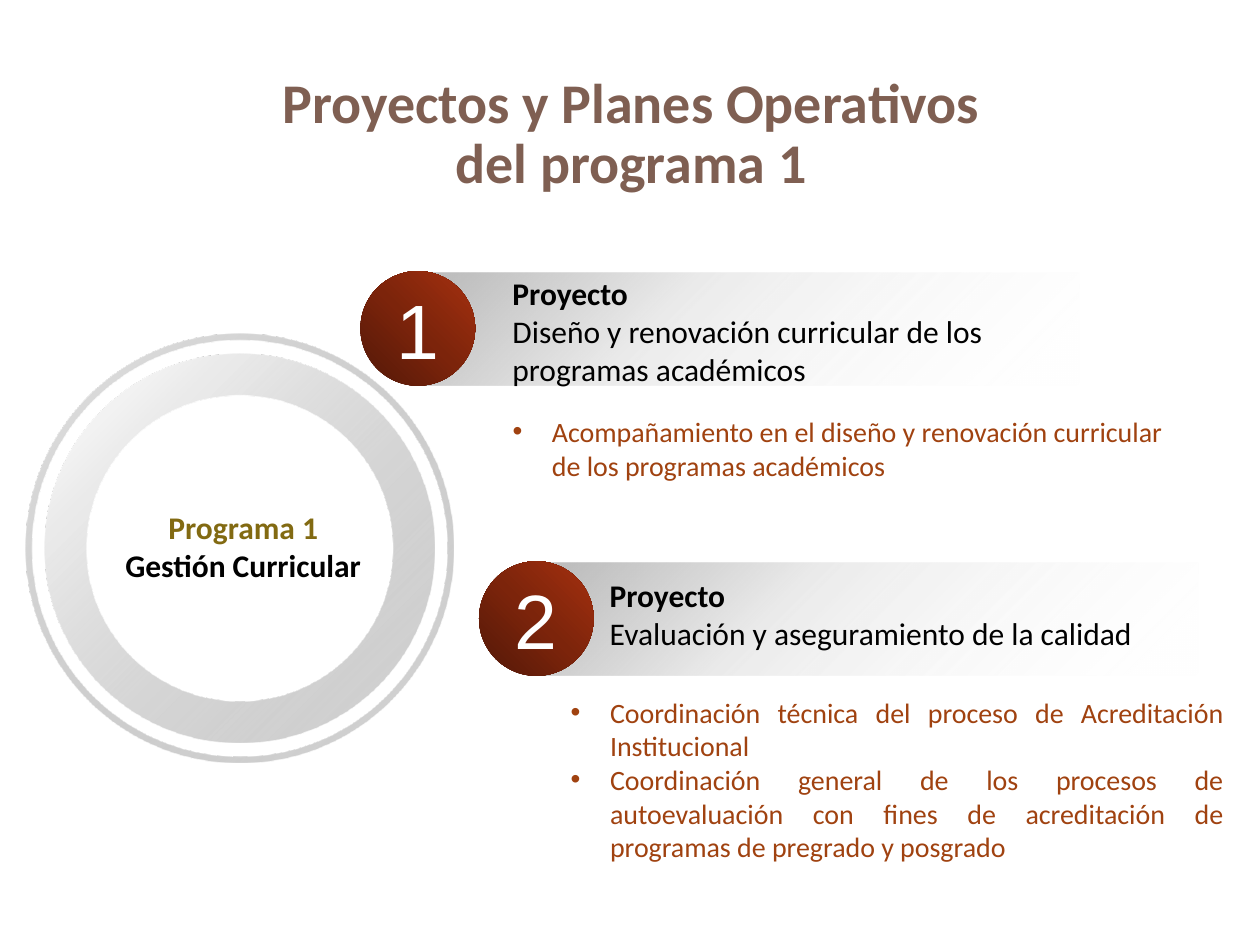
from lxml import etree
from pptx import Presentation
from pptx.dml.color import RGBColor
from pptx.enum.shapes import MSO_SHAPE
from pptx.enum.text import MSO_ANCHOR, MSO_AUTO_SIZE, PP_ALIGN
from pptx.oxml.ns import qn
from pptx.util import Pt

RECTANGLE, OVAL, DONUT = MSO_SHAPE.RECTANGLE, MSO_SHAPE.OVAL, MSO_SHAPE.DONUT
TOP, MIDDLE = MSO_ANCHOR.TOP, MSO_ANCHOR.MIDDLE
NO_FIT, GROW = MSO_AUTO_SIZE.NONE, MSO_AUTO_SIZE.SHAPE_TO_FIT_TEXT
LEFT, CENTER, JUSTIFY = PP_ALIGN.LEFT, PP_ALIGN.CENTER, PP_ALIGN.JUSTIFY

BLACK = RGBColor(0x00, 0x00, 0x00)
WHITE = RGBColor(0xFF, 0xFF, 0xFF)
TITLE_BROWN = RGBColor(0x7F, 0x5F, 0x52)
OLIVE = RGBColor(0x82, 0x6A, 0x12)
RUST = RGBColor(0xA0, 0x42, 0x10)
DARK_RED = RGBColor(0x52, 0x18, 0x08)
MID_RED = RGBColor(0x7C, 0x24, 0x0B)
BRIGHT_RED = RGBColor(0xA5, 0x30, 0x0F)
SILVER = RGBColor(0xBF, 0xBF, 0xBF)
PALE_GRAY = RGBColor(0xF2, 0xF2, 0xF2)
LIGHT_GRAY = RGBColor(0xD9, 0xD9, 0xD9)
GRAY = RGBColor(0xA6, 0xA6, 0xA6)

BANNER_STOPS = [(5, SILVER, 100), (37, SILVER, 31), (100, WHITE, 0)]
BADGE_STOPS = [(0, DARK_RED, 100), (50, MID_RED, 100), (100, BRIGHT_RED, 100)]
BAND_STOPS = [(16, PALE_GRAY, 100), (87, GRAY, 52)]
RIM_STOPS = [(16, LIGHT_GRAY, 100), (87, GRAY, 52)]


def add_gradient_shape(shapes, kind, box, stops, angle):
    """Add an unlined shape whose stops are (position %, colour, opacity %)."""
    shape = shapes.add_shape(kind, *(Pt(length) for length in box))
    shape.shadow.inherit = False
    shape.line.fill.background()
    shape.fill.gradient()
    gradient = shape.element.spPr.find(qn("a:gradFill"))
    for child in list(gradient):
        gradient.remove(child)
    stop_list = etree.SubElement(gradient, qn("a:gsLst"))
    for position, color, opacity in stops:
        stop = etree.SubElement(stop_list, qn("a:gs"), pos=str(position * 1000))
        tint = etree.SubElement(stop, qn("a:srgbClr"), val=str(color))
        if opacity < 100:
            etree.SubElement(tint, qn("a:alpha"), val=str(opacity * 1000))
    etree.SubElement(gradient, qn("a:lin"), ang=str(angle * 60000), scaled="0")
    return shape


def add_run(paragraph, text, size, color, bold=False, font="Calibri"):
    """Append one formatted run to a paragraph."""
    run = paragraph.add_run()
    run.text = text
    run.font.name = font
    run.font.size = Pt(size)
    run.font.bold = bold
    run.font.color.rgb = color


def add_text(shapes, box, lines, size, align, anchor=MIDDLE, bulleted=False):
    """Add a text box with one paragraph per (text, colour, bold) line."""
    textbox = shapes.add_textbox(*(Pt(length) for length in box))
    frame = textbox.text_frame
    frame.word_wrap = True
    frame.auto_size = GROW
    frame.vertical_anchor = anchor
    for index, (text, color, bold) in enumerate(lines):
        paragraph = frame.add_paragraph() if index else frame.paragraphs[0]
        paragraph.alignment = align
        if bulleted:
            properties = paragraph._p.get_or_add_pPr()
            properties.set("marL", str(Pt(22.5)))
            properties.set("indent", str(-Pt(22.5)))
            etree.SubElement(properties, qn("a:buFont"), typeface="Arial")
            etree.SubElement(properties, qn("a:buChar"), char="•")
        add_run(paragraph, text, size, color, bold)


def add_title(slide, box, lines):
    """Place and format the title placeholder."""
    title = slide.shapes.title
    title.left, title.top, title.width, title.height = (Pt(length) for length in box)
    frame = title.text_frame
    frame.auto_size = NO_FIT
    frame.vertical_anchor = MIDDLE
    frame.margin_bottom = Pt(39)
    paragraph = frame.paragraphs[0]
    paragraph.alignment = CENTER
    paragraph.line_spacing = 0.9
    for index, line in enumerate(lines):
        if index:
            paragraph.add_line_break()
        add_run(paragraph, line, 32, TITLE_BROWN, True)


def add_project(slide, box, number, name, caption_box):
    """Add a fading banner with its caption and numbered badge."""
    left, top, width, height = box
    shapes = slide.shapes.add_group_shape().shapes
    add_gradient_shape(shapes, RECTANGLE, box, BANNER_STOPS, 45)
    lines = [("Proyecto", BLACK, True), (name, BLACK, False)]
    add_text(shapes, caption_box, lines, 18, LEFT)
    badge_box = (left - 33, top - 0.7, height + 0.7, height + 0.7)
    badge = add_gradient_shape(shapes, OVAL, badge_box, BADGE_STOPS, 315)
    frame = badge.text_frame
    frame.word_wrap = False
    frame.vertical_anchor = MIDDLE
    frame.margin_left = frame.margin_right = Pt(5.8)
    frame.margin_top = frame.margin_bottom = Pt(7.2)
    frame.paragraphs[0].alignment = CENTER
    add_run(frame.paragraphs[0], number, 44, WHITE, font="Arial")


def add_program(slide, box):
    """Add the double ring with the programme name inside."""
    left, top, width, height = box
    shapes = slide.shapes.add_group_shape().shapes
    inset = 11.2
    band_box = (left + inset, top + inset, width - 2 * inset, height - 2 * inset)
    band = add_gradient_shape(shapes, DONUT, band_box, BAND_STOPS, 45)
    band.adjustments[0] = 0.107
    rim = add_gradient_shape(shapes, DONUT, box, RIM_STOPS, 45)
    rim.adjustments[0] = 0.015
    lines = [("Programa 1", OLIVE, True), ("Gestión Curricular", BLACK, True)]
    add_text(shapes, (left + 39.6, top + 95.8, 170, 51), lines, 18, CENTER)


def add_plans(slide, box, plans, align):
    """Add the bulleted operating plans of a project."""
    lines = [(plan, RUST, False) for plan in plans]
    add_text(slide.shapes, box, lines, 16, align, TOP, bulleted=True)


def main():
    """Build and save the slide."""
    presentation = Presentation()
    presentation.slide_width, presentation.slide_height = Pt(720), Pt(540)
    slide = presentation.slides.add_slide(presentation.slide_layouts[5])
    add_title(slide, (36.7, 65.5, 648, 59),
              ["Proyectos y Planes Operativos", "del programa 1"])
    add_project(slide, (239, 155.6, 378, 64.8), "1",
                "Diseño y renovación curricular de los programas académicos",
                (285.8, 152.6, 335.5, 72.7))
    add_project(slide, (306.7, 321.4, 378, 64.8), "2",
                "Evaluación y aseguramiento de la calidad",
                (341.3, 325.4, 416.9, 51))
    add_program(slide, (14.4, 190.8, 244.8, 244.8))
    add_plans(slide, (285.8, 233.3, 387.4, 46),
              ["Acompañamiento en el diseño y renovación curricular "
               "de los programas académicos"], LEFT)
    add_plans(slide, (319, 393.8, 387.4, 104.4),
              ["Coordinación técnica del proceso de Acreditación Institucional",
               "Coordinación general de los procesos de autoevaluación con fines "
               "de acreditación de programas de pregrado y posgrado"], JUSTIFY)
    presentation.save("out.pptx")


if __name__ == "__main__":
    main()
